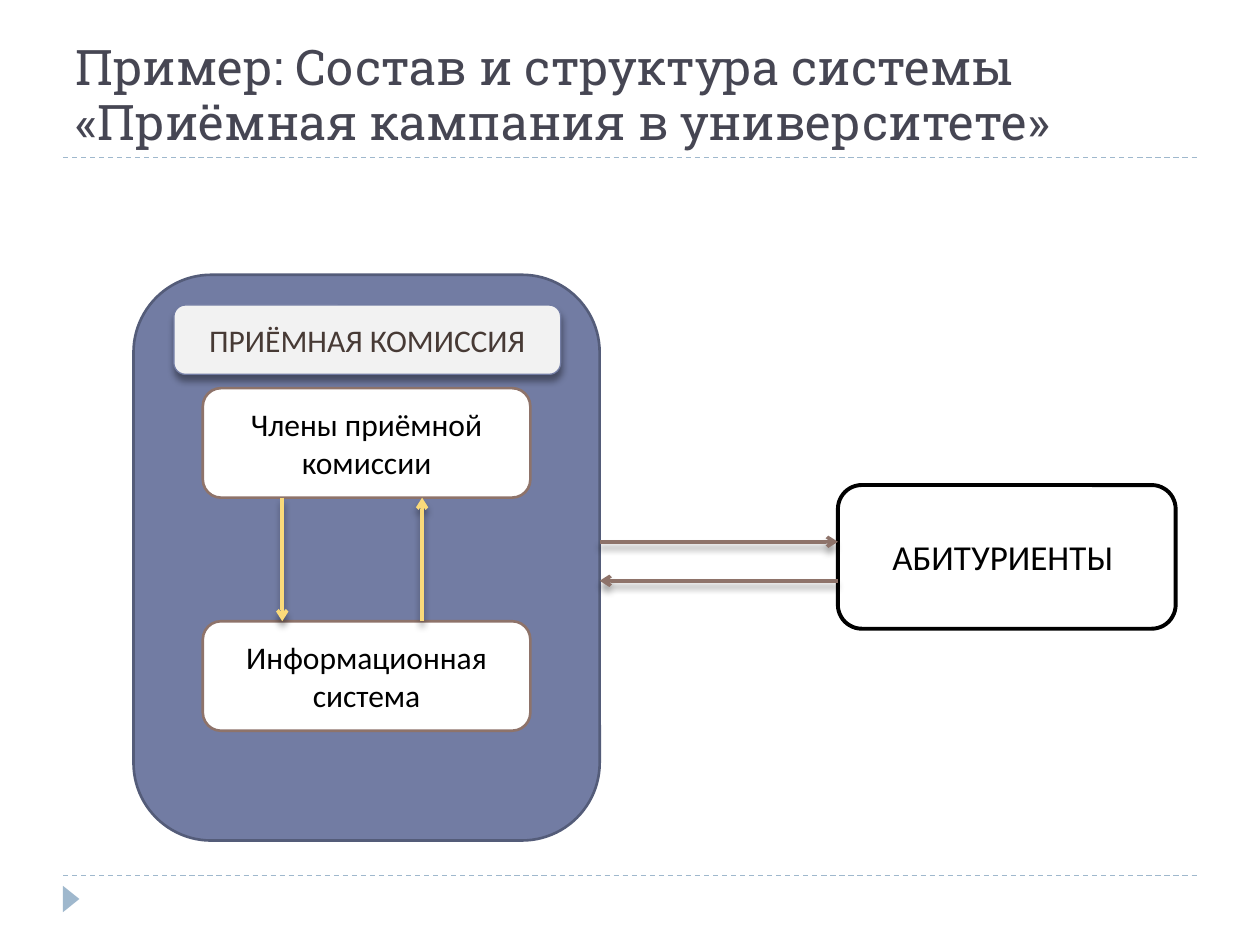
"""Builds the slide on the composition and structure of an admission campaign system."""
from lxml import etree
from pptx import Presentation
from pptx.dml.color import RGBColor
from pptx.enum import dml, shapes, text
from pptx.oxml.ns import qn
from pptx.util import Pt

THEME = {
    "heading_font": "Roboto Slab", "body_font": "Calibri",
    "heading_size": 28, "part_size": 18, "outside_size": 20,
    "heading": "464653", "accent": "9FB8CD", "system": "727CA3", "system_edge": "545C79",
    "label": "F2F2F2", "label_text": "473A35", "part": "FFFFFF", "brown": "8E736A",
    "yellow": "FADA7A", "black": "000000",
}

HEADING = "Пример: Состав и структура системы «Приёмная кампания в университете»"
SYSTEM = (76.3, 157, 266.4, 323.3)
LABEL = ("ПРИЁМНАЯ КОМИССИЯ", (99.4, 174.3, 221, 39.6))
PARTS = ["Члены приёмной комиссии", "Информационная система"]
PART_LEFT, PART_TOP, PART_WIDTH, PART_HEIGHT, PART_PITCH = 115.9, 221.8, 187.2, 62.6, 133.2
OUTSIDE = ("АБИТУРИЕНТЫ ", (478.8, 277.2, 193, 82.1))
DOWN_X, UP_X = 161.3, 241.2
OUT_Y, BACK_Y = 309.6, 331.9
RULE_LEFT, RULE_RIGHT, RULE_YS = 36, 684, (500.4, 90)


def color(name):
    return RGBColor.from_string(THEME[name])


def add_shadow(effects):
    shadow = etree.SubElement(effects, qn("a:outerShdw"), blurRad=str(Pt(4)),
                              dist=str(Pt(3.4)), dir="5400000", rotWithShape="0")
    black = etree.SubElement(shadow, qn("a:srgbClr"), val=THEME["black"])
    etree.SubElement(black, qn("a:alpha"), val="40000")


def write(frame, words, font, size, ink):
    frame.text = words
    frame.word_wrap = True
    for run in frame.paragraphs[0].runs:
        run.font.name = THEME[font]
        run.font.size = Pt(THEME[size])
        run.font.color.rgb = color(ink)


def add_box(slide, place, fill, edge, width, words="", size="part_size", ink="black",
            shadow=False):
    box = slide.shapes.add_shape(shapes.MSO_SHAPE.ROUNDED_RECTANGLE, *map(Pt, place))
    box.shadow.inherit = False
    box.fill.solid()
    box.fill.fore_color.rgb = color(fill)
    box.line.color.rgb = color(edge)
    box.line.width = Pt(width)
    if shadow:
        add_shadow(box._element.spPr.find(qn("a:effectLst")))
    if words:
        write(box.text_frame, words, "body_font", size, ink)
        box.text_frame.vertical_anchor = text.MSO_ANCHOR.MIDDLE
        box.text_frame.paragraphs[0].alignment = text.PP_ALIGN.CENTER


def add_line(slide, ends, ink, width, arrow=False):
    line = slide.shapes.add_connector(shapes.MSO_CONNECTOR.STRAIGHT, *map(Pt, ends))
    line.line.color.rgb = color(ink)
    line.line.width = Pt(width)
    if arrow:
        etree.SubElement(line.line._get_or_add_ln(), qn("a:tailEnd"), type="arrow")
    else:
        line.line.dash_style = dml.MSO_LINE.DASH
    effects = etree.SubElement(line._element.spPr, qn("a:effectLst"))
    if arrow:
        add_shadow(effects)


def add_frame(slide):
    for y in RULE_YS:
        add_line(slide, (RULE_LEFT, y, RULE_RIGHT, y), "accent", 0.75)
    marker = slide.shapes.add_shape(shapes.MSO_SHAPE.ISOSCELES_TRIANGLE,
                                    *map(Pt, (33.1, 509, 15.1, 9.4)))
    marker.rotation = 90
    marker.shadow.inherit = False
    marker.fill.solid()
    marker.fill.fore_color.rgb = color("accent")
    marker.line.fill.background()


def add_heading(slide):
    heading = slide.shapes.title
    heading.left, heading.top, heading.width, heading.height = map(Pt, (36, 18, 648, 72))
    frame = heading.text_frame
    write(frame, HEADING, "heading_font", "heading_size", "heading")
    frame.auto_size = text.MSO_AUTO_SIZE.NONE
    frame.vertical_anchor = text.MSO_ANCHOR.BOTTOM
    frame.paragraphs[0].alignment = text.PP_ALIGN.LEFT
    frame.paragraphs[0].line_spacing = 0.93


def add_diagram(slide):
    add_box(slide, SYSTEM, "system", "system_edge", 1.5)
    for i, part in enumerate(PARTS):
        place = (PART_LEFT, PART_TOP + i * PART_PITCH, PART_WIDTH, PART_HEIGHT)
        add_box(slide, place, "part", "brown", 1.5, part)
    upper, lower = PART_TOP + PART_HEIGHT, PART_TOP + PART_PITCH
    add_line(slide, (DOWN_X, upper, DOWN_X, lower), "yellow", 2, arrow=True)
    add_line(slide, (UP_X, lower, UP_X, upper), "yellow", 2, arrow=True)

    label, label_place = LABEL
    add_box(slide, label_place, "label", "system", 0.75, label, ink="label_text", shadow=True)
    outside, outside_place = OUTSIDE
    add_box(slide, outside_place, "part", "black", 2.25, outside, "outside_size")
    near, far = SYSTEM[0] + SYSTEM[2], outside_place[0]
    add_line(slide, (near, OUT_Y, far, OUT_Y), "brown", 2, arrow=True)
    add_line(slide, (far, BACK_Y, near, BACK_Y), "brown", 2, arrow=True)


def main():
    deck = Presentation()
    deck.slide_width, deck.slide_height = Pt(720), Pt(540)
    slide = deck.slides.add_slide(deck.slide_layouts[5])
    add_frame(slide)
    add_heading(slide)
    add_diagram(slide)
    deck.save("out.pptx")


if __name__ == "__main__":
    main()
